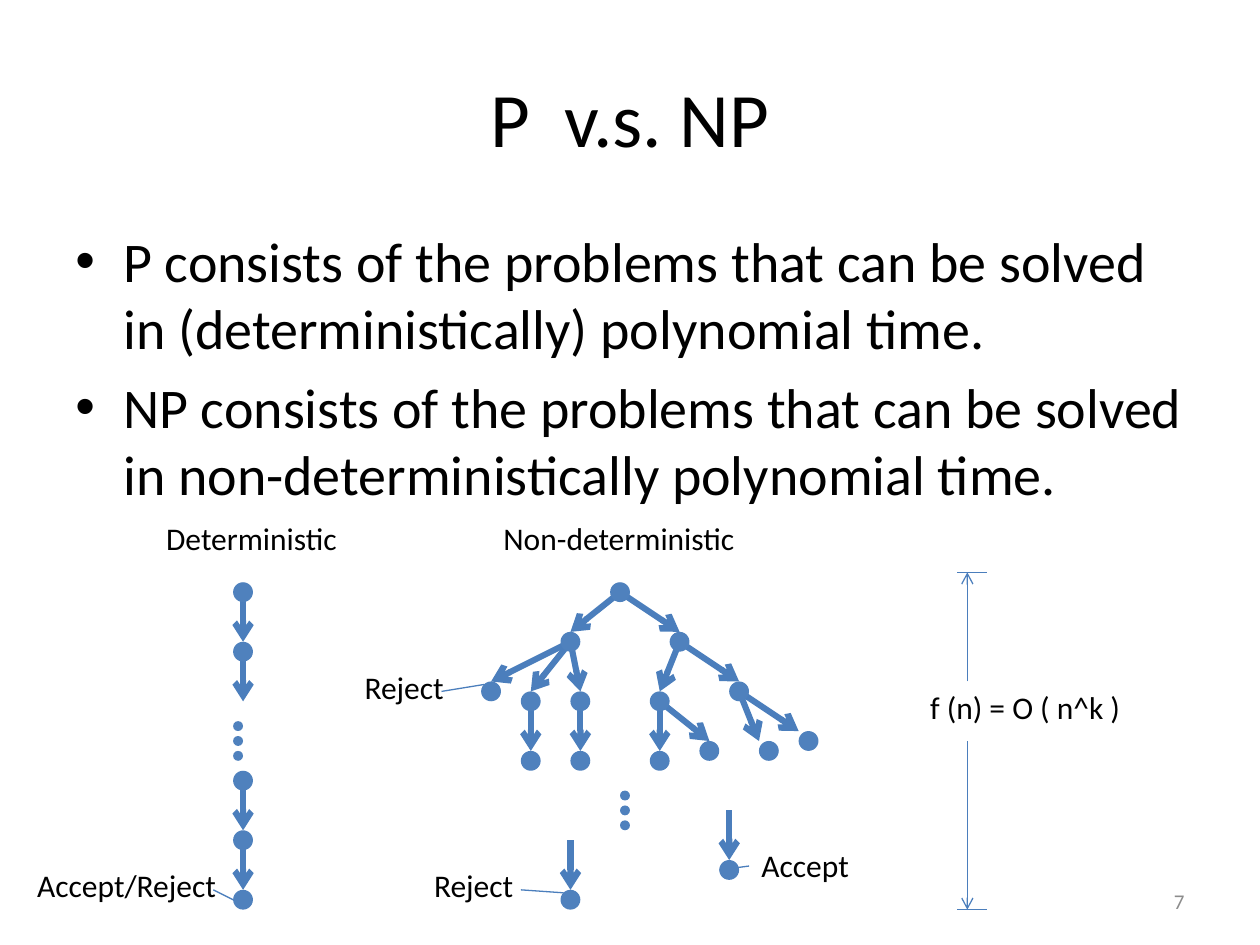
import pptx
import pptx.util
import pptx.dml.color
import pptx.enum.shapes
import pptx.enum.text
import pptx.oxml.ns
from lxml import etree

BLACK = pptx.dml.color.RGBColor(0x00, 0x00, 0x00)
GREY = pptx.dml.color.RGBColor(0x8C, 0x8C, 0x8C)
NODE_BLUE = pptx.dml.color.RGBColor(0x4F, 0x81, 0xBD)
LINE_BLUE = pptx.dml.color.RGBColor(0x4B, 0x7E, 0xBC)
ALIGN = pptx.enum.text.PP_ALIGN
MIDDLE = pptx.enum.text.MSO_ANCHOR.MIDDLE
qn = pptx.oxml.ns.qn

deck = pptx.Presentation()
deck.slide_width = pptx.util.Inches(10)
deck.slide_height = pptx.util.Inches(7.5)
slide = deck.slides.add_slide(deck.slide_layouts[6])

# Grid: 127 columns across the slide, square cells, row 0 at the tree's root
CELL = deck.slide_width / 127
ROOT_Y = pptx.util.Inches(4.7)


def grid(column, row):
    return int((column + 0.5) * CELL), int(ROOT_Y + row * CELL)


def add_text(left, top, width, height, lines, size, color=BLACK,
             align=ALIGN.LEFT, anchor=pptx.enum.text.MSO_ANCHOR.TOP, wrap=True):
    frame = slide.shapes.add_textbox(int(left), int(top), int(width), int(height)).text_frame
    frame.word_wrap = wrap
    frame.vertical_anchor = anchor
    frame.text = "\n".join(lines)
    for paragraph in frame.paragraphs:
        paragraph.alignment = align
        font = paragraph.runs[0].font
        font.name = "Calibri"
        font.size = pptx.util.Pt(size)
        font.color.rgb = color
    return frame


# Title, bullets and slide number
W, H = deck.slide_width, deck.slide_height
add_text(0.05 * W, 0.04 * H, 0.9 * W, H / 6, ["P  v.s. NP"], 44,
         align=ALIGN.CENTER, anchor=MIDDLE)
definitions = add_text(0.05 * W, 1.75 / 7.5 * H, 0.9 * W, 0.66 * H, [
    "P consists of the problems that can be solved in (deterministically) polynomial time.",
    "NP consists of the problems that can be solved in non-deterministically polynomial time.",
], 32)
for paragraph in definitions.paragraphs:
    paragraph.space_before = pptx.util.Pt(6.4)
    properties = paragraph._p.get_or_add_pPr()
    indent = pptx.util.Inches(0.38)
    properties.set("marL", str(indent))
    properties.set("indent", str(-indent))
    etree.SubElement(properties, qn("a:buFont"), typeface="Arial")
    etree.SubElement(properties, qn("a:buChar"), char="•")
add_text(0.717 * W, 0.927 * H, 0.233 * W, 0.053 * H, ["7"], 12, GREY, ALIGN.RIGHT, MIDDLE)

# Places as (column, row)
root, left, right = (62, 0), (57, 5), (68, 5)
left_reject, left_mid, left_inner = (49, 10), (53, 11), (58, 11)
right_inner, right_outer = (66, 11), (74, 10)
end_reject, end_accept = (57, 31), (73, 28)
chain = [(24, row) for row in (0, 6, 19, 25, 31)]
leaves = [(53, 17), (58, 17), (66, 17), (71, 16), (77, 16), (81, 15)]

# Branches that end on top of their child
branches = [
    (root, left), (root, right),
    (left, left_reject), (left, left_mid), (left, left_inner),
    (right, right_inner), (right, right_outer),
    (left_mid, leaves[0]), (left_inner, leaves[1]),
    (right_inner, leaves[2]), (right_inner, leaves[3]),
    ((57, 25), end_reject), ((73, 22), end_accept),
]
steps = [(parent, (column, row - 1)) for parent, (column, row) in branches]
# Branches that end at the corner of their child
steps += [(right_outer, (column - 1, row - 1)) for column, row in leaves[4:]]
# Deterministic chain
steps += [((column, row), (column, row + 5)) for column, row in chain[:-1]]

# Thin lines: callouts, then the height bracket
thin_lines = [
    ((23, 31), (21, 30)), ((56.3, 30.3), (52, 30)),
    ((48.3, 9.3), (44, 10)), ((72, 28), (75, 27.6)),
    ((96, -2), (99, -2)), ((96, 32), (99, 32)),
]
height_arrows = [((97, 15), (97, 32)), ((97, 9), (97, -2))]

for group, weight, arrow in ((steps, 3.5, True), (thin_lines, 0.75, False),
                             (height_arrows, 0.75, True)):
    for start, end in group:
        line = slide.shapes.add_connector(
            pptx.enum.shapes.MSO_CONNECTOR.STRAIGHT, *grid(*start), *grid(*end))
        line.line.color.rgb = LINE_BLUE
        line.line.width = pptx.util.Pt(weight)
        if arrow:
            etree.SubElement(line.line._get_or_add_ln(), qn("a:tailEnd"), type="arrow")
        etree.SubElement(line._element.spPr, qn("a:effectLst"))

# Nodes are two cells wide, ellipsis dots one cell
nodes = chain + leaves + [root, left, right, left_reject, left_mid, left_inner,
                          right_inner, right_outer, end_reject, end_accept]
ellipses = [(column, first + 1.5 * i)
            for column, first in ((23.5, 13.5), (62.5, 20.5)) for i in range(3)]
for places, cells in ((nodes, 2), (ellipses, 1)):
    diameter = int(cells * CELL)
    for place in places:
        x, y = grid(*place)
        dot = slide.shapes.add_shape(pptx.enum.shapes.MSO_SHAPE.OVAL,
                                     x - diameter // 2, y - diameter // 2, diameter, diameter)
        dot.shadow.inherit = False
        dot.fill.solid()
        dot.fill.fore_color.rgb = NODE_BLUE
        dot.line.fill.background()

# Labels: wording, column, row, width in columns
for wording, column, row, columns in (
        ("Deterministic", 15, -8, 20), ("Non-deterministic", 49, -8, 27),
        ("Accept/Reject", 2, 27, 23), ("Reject", 42, 27, 12),
        ("Accept", 75, 25, 13), ("Reject", 35, 7, 12),
        ("f (n) = O ( n^k )", 92, 9, 25)):
    add_text(*grid(column, row), columns * CELL, 5 * CELL, [wording], 18, wrap=False)

deck.save("out.pptx")
